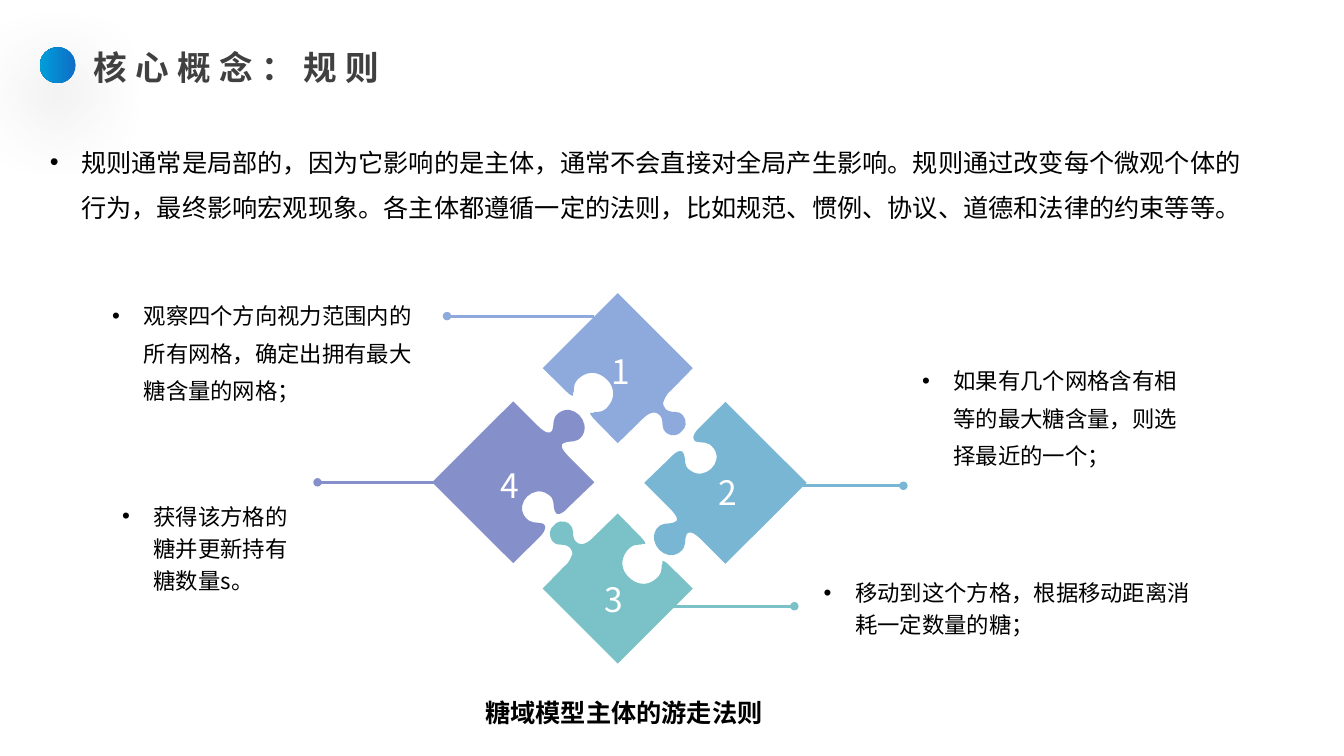
import pptx
import pptx.dml.color
import pptx.enum.shapes
import pptx.enum.text
import pptx.oxml.ns
import pptx.util
from lxml import etree

Pt = pptx.util.Pt
ALIGN = pptx.enum.text.PP_ALIGN
ANCHOR = pptx.enum.text.MSO_ANCHOR

# Outlines in points around the centre of a piece: a pair of numbers is a
# straight step, six numbers are a Bezier curve (two controls, then the end).
TALL_PIECE = [
    (-15.5, 37.8),
    (-18.4, 34.9, -19.8, 32.8, -19.8, 32),
    (-18.4, 32, -16.9, 32, -16.2, 31.3),
    (-12.6, 31.3, -9.7, 31.3, -6.1, 26.3),
    (-1.8, 20.5, -2.5, 13.3, -7.6, 8.3),
    (-13.3, 2.5, -20.5, 1.8, -26.3, 6.1),
    (-31.3, 9.7, -31.3, 12.6, -31.3, 16.2),
    (-32, 16.9, -32, 18.4, -32, 19.8),
    (-32.8, 19.8, -34.2, 19.1, -36.4, 16.9),
    (-53.6, 0), (0, -53.6), (53.6, 0), (38.5, 15.5),
    (35.6, 17.6, 34.2, 20.5, 33.5, 22),
    (31.3, 25.6, 32.8, 27.7, 34.2, 29.2),
    (34.2, 29.2, 34.9, 29.9, 36.4, 30.6),
    (37.8, 31.3, 40, 31.3, 41.4, 31.3),
    (43.6, 31.3, 45, 32, 46.4, 33.5),
    (50, 38.5, 48.6, 42.8, 45.7, 45),
    (43.6, 47.9, 39.2, 49.3, 34.9, 46.4),
    (32.8, 44.3, 32, 42.8, 32, 40.7),
    (32, 39.2, 32, 37.8, 31.3, 35.6),
    (30.6, 34.2, 29.9, 33.5, 29.9, 33.5),
    (24.8, 28.4, 18.4, 35.6, 16.2, 37.8),
    (0, 53.6),
]
WIDE_PIECE = [
    (-24.8, -8.6),
    (-30.6, -12.2, -27.7, -15.8, -29.9, -20.9),
    (-30.6, -23.8, -34.2, -23.8, -40, -17.3),
    (-58, 0), (-40, 18),
    (-33.5, 24.5, -33.5, 27.4, -36.4, 28.1),
    (-41.4, 30.2, -45, 27.4, -49.3, 33.1),
    (-55.8, 43.2, -42.8, 56.9, -32.8, 49.7),
    (-27, 45.4, -29.9, 41.8, -27.7, 36.7),
    (-26.3, 34.6, -23.4, 34.6, -17.6, 40.3),
    (0, 57.8), (58, 0), (0, -57.8), (-19.8, -38.2),
    (-24.1, -33.1, -23.4, -31, -21.2, -29.5),
    (-16.2, -28.1, -12.6, -30.2, -8.3, -24.5),
    (-1.1, -14.4, -14.8, -1.4, -24.8, -8.6),
]


def rgb(hex_colour):
    return pptx.dml.color.RGBColor.from_string(hex_colour)


def add_xml(parent, tag, **attributes):
    child = etree.SubElement(parent, pptx.oxml.ns.qn(tag))
    for key, value in attributes.items():
        child.set(key, str(value))
    return child


def bend(piece, outline):
    """Merge each three straight steps that stand for a curve into one Bezier."""
    qn = pptx.oxml.ns.qn
    straight = iter(list(piece._element.iter(qn("a:lnTo"))))
    for step in outline[1:]:
        first = next(straight)
        if len(step) == 6:
            first.tag = qn("a:cubicBezTo")
            for _ in range(2):
                spare = next(straight)
                first.append(spare[0])
                spare.getparent().remove(spare)


class RuleSlide:
    font = "Noto Sans CJK SC"
    black, white, grey = "000000", "FFFFFF", "404040"

    def __init__(self, slide):
        self.slide = slide
        self.shapes = slide.shapes

    def text(self, box, words, size, colour=black, bold=False, align=ALIGN.LEFT,
             anchor=ANCHOR.TOP, line_spacing=1.0, bullet=False, tracking=0):
        frame = self.shapes.add_textbox(*map(Pt, box)).text_frame
        frame.word_wrap = True
        frame.vertical_anchor = anchor
        paragraph = frame.paragraphs[0]
        paragraph.alignment = align
        paragraph.line_spacing = line_spacing
        if bullet:
            properties = paragraph._p.get_or_add_pPr()
            properties.set("marL", str(Pt(22.5)))
            properties.set("indent", str(-Pt(22.5)))
            add_xml(properties, "a:buFont", typeface="Arial")
            add_xml(properties, "a:buChar", char="•")
        run = paragraph.add_run()
        run.text = words
        run.font.size = Pt(size)
        run.font.bold = bold
        run.font.color.rgb = rgb(colour)
        run.font.name = self.font
        run_properties = run._r.get_or_add_rPr()
        add_xml(run_properties, "a:ea", typeface=self.font)
        if tracking:
            run_properties.set("spc", str(tracking * 100))

    def title_dot(self, box):
        dot = self.shapes.add_shape(pptx.enum.shapes.MSO_SHAPE.OVAL, *map(Pt, box))
        dot.line.fill.background()
        dot.fill.gradient()
        dot.fill.gradient_angle = 180
        for stop, position, colour in zip(dot.fill.gradient_stops, (0, 1), ("0F6FC6", "009DD9")):
            stop.position = position
            stop.color.rgb = rgb(colour)
        effects = add_xml(dot._element.spPr, "a:effectLst")
        shadow = add_xml(effects, "a:outerShdw", blurRad=Pt(60), dist=Pt(20),
                         dir=90 * 60000, algn="t", rotWithShape=0)
        add_xml(add_xml(shadow, "a:srgbClr", val=self.black), "a:alpha", val=40000)

    def pointer(self, start, end, colour):
        """Draw a line with a round dot at its end."""
        line = self.shapes.add_connector(pptx.enum.shapes.MSO_CONNECTOR.STRAIGHT,
                                         *map(Pt, start + end))
        line.line.color.rgb = rgb(colour)
        line.line.width = Pt(2)
        add_xml(line.line._get_or_add_ln(), "a:tailEnd", type="oval")
        add_xml(line._element.spPr, "a:effectLst")

    def puzzle_piece(self, outline, centre, turn, colour):
        """Draw an outline around its centre; a turn of -1 is half a rotation."""
        points = [step[i:i + 2] for step in outline for i in range(0, len(step), 2)]
        vertices = [tuple(Pt(c + turn * offset) for c, offset in zip(centre, point))
                    for point in points]
        builder = self.shapes.build_freeform(*vertices[0])
        # Every outline ends on its own closing step, so none is added here.
        builder.add_line_segments(vertices[1:], close=True)
        piece = builder.convert_to_shape()
        bend(piece, outline)
        piece.shadow.inherit = False
        piece.fill.solid()
        piece.fill.fore_color.rgb = rgb(colour)
        piece.line.fill.background()


def main():
    deck = pptx.Presentation()
    deck.slide_width, deck.slide_height = Pt(960), Pt(540)
    page = RuleSlide(deck.slides.add_slide(deck.slide_layouts[6]))

    page.title_dot((28.4, 33.8, 25.6, 25.6))
    page.text((60, 30.2, 233.3, 36), "核心概念：规则", 24, page.grey, bold=True,
              align=ALIGN.JUSTIFY, tracking=6)
    page.text((28.5, 90.7, 882, 90),
              "规则通常是局部的，因为它影响的是主体，通常不会直接对全局产生影响。"
              "规则通过改变每个微观个体的行为，最终影响宏观现象。"
              "各主体都遵循一定的法则，比如规范、惯例、协议、道德和法律的约束等等。",
              18, line_spacing=1.5, bullet=True)
    page.text((308.9, 494.4, 273.6, 28.8), "糖域模型主体的游走法则", 18, bold=True,
              align=ALIGN.CENTER)

    # number, colour, pointer, outline, centre, turn, number corner, rule box, spacing, rule
    rules = [
        ("1", "8EAADC", (424, 225.8), (319.3, 225.8), TALL_PIECE, (441.3, 263), 1,
         (418.3, 235.4), (73.1, 205.2, 233.3, 86.4), 1.4,
         "观察四个方向视力范围内的所有网格，确定出拥有最大糖含量的网格；"),
        ("2", "79B6D3", (572.4, 347), (645.3, 347), WIDE_PIECE, (518.2, 344.9), 1,
         (494.6, 321.8), (651.6, 225.4, 198, 139), 1.4,
         "如果有几个网格含有相等的最大糖含量，则选择最近的一个；"),
        ("3", "7AC2C7", (455.8, 433), (567.4, 433), TALL_PIECE, (441.3, 420.4), -1,
         (413, 398.2), (581.3, 391.9, 283, 82), 1.2,
         "移动到这个方格，根据移动距离消耗一定数量的糖；"),
        ("4", "8590CA", (327.6, 344.5), (226.8, 344.5), WIDE_PIECE, (366.6, 344.5), -1,
         (339.1, 316.8), (80.2, 346.7, 133.9, 86.4), 1.2,
         "获得该方格的糖并更新持有糖数量s。"),
    ]
    for number, colour, start, end, outline, centre, turn, corner, box, spacing, rule in rules:
        page.pointer(start, end, colour)
        page.puzzle_piece(outline, centre, turn, colour)
        page.text(corner + (50.4, 50.4), number, 24, page.white, align=ALIGN.CENTER,
                  anchor=ANCHOR.MIDDLE, line_spacing=1.3)
        page.text(box, rule, 16, anchor=ANCHOR.MIDDLE, line_spacing=spacing, bullet=True)

    deck.save("out.pptx")


if __name__ == "__main__":
    main()
